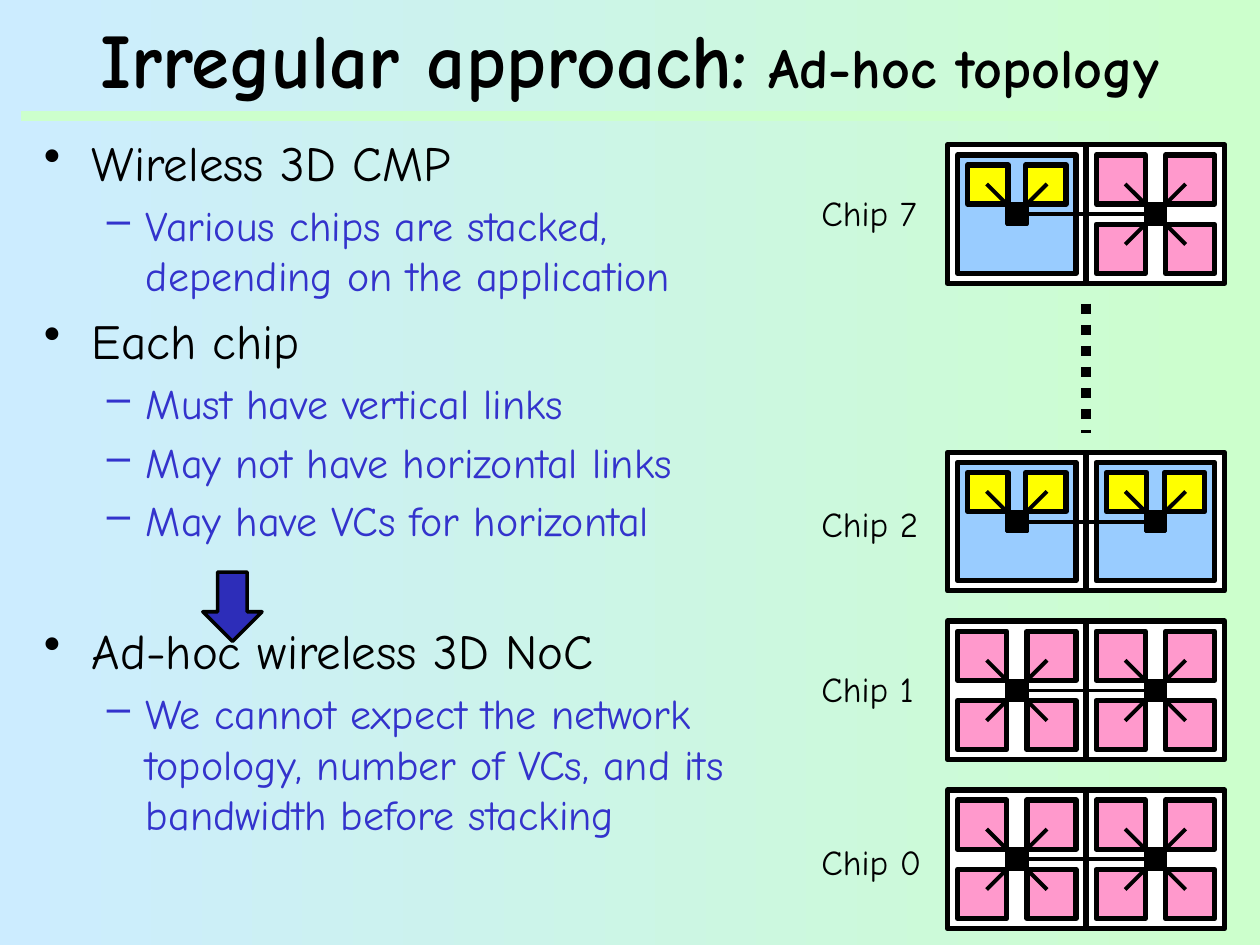
"""Builds the slide on an ad-hoc topology for wireless 3D chips."""
from lxml import etree
from pptx import Presentation
from pptx import util as u
from pptx.dml.color import RGBColor
from pptx.enum import dml, shapes, text
from pptx.oxml.ns import qn

COLUMNS, ROWS = 100, 75
CELL = u.Inches(0.1)
TILE = 11
FONT = "Comic Neue"
COLORS = {
    "sky": "CCECFF", "mint": "CCFFCC", "ink": "000000", "detail": "3333CC",
    "arrow": "2D2DB9", "tile": "FFFFFF", "cpu": "99CCFF", "cache": "FFFF00",
    "core": "FF99CC",
}
CHIPS = [
    ("Chip 7", 11.5, 14.7, ("cpu", "cores")),
    ("Chip 2", 35.9, 39.4, ("cpu", "cpu")),
    ("Chip 1", 49.3, 52.5, ("cores", "cores")),
    ("Chip 0", 62.7, 66.2, ("cores", "cores")),
]
TOPICS = [
    ("Wireless 3D CMP", 5.6,
     ["Various chips are stacked, depending on the application"]),
    ("Each chip", 5.6,
     ["Must have vertical links", "May not have horizontal links",
      "May have VCs for horizontal"]),
    ("Ad-hoc wireless 3D NoC", 43,
     ["We cannot expect the network topology, number of VCs, and its "
      "bandwidth before stacking"]),
]


def color(name):
    """Return the named colour."""
    return RGBColor.from_string(COLORS[name])


def cells(*lengths):
    """Convert grid cells to slide lengths."""
    return [round(length * CELL) for length in lengths]


def add_run(paragraph, words, size, ink="ink", bold=False):
    """Append formatted text to a paragraph."""
    run = paragraph.add_run()
    run.text = words
    run.font.name = FONT
    run.font.size = u.Pt(size)
    run.font.bold = bold
    run.font.color.rgb = color(ink)


def add_frame(slide, box, wrap=True, anchor=text.MSO_ANCHOR.TOP):
    """Add a text box and return its frame."""
    frame = slide.shapes.add_textbox(*cells(*box)).text_frame
    frame.word_wrap = wrap
    frame.vertical_anchor = anchor
    return frame


def add_block(slide, box, fill, width=3, kind=shapes.MSO_SHAPE.RECTANGLE):
    """Add a filled, outlined shape."""
    block = slide.shapes.add_shape(kind, *cells(*box))
    block.shadow.inherit = False
    block.fill.solid()
    block.fill.fore_color.rgb = color(fill)
    block.line.color.rgb = color("ink")
    block.line.width = u.Pt(width)
    return block


def add_line(slide, start, end, ink="ink", width=2.25):
    """Add a straight line without a shadow."""
    line = slide.shapes.add_connector(
        shapes.MSO_CONNECTOR.STRAIGHT, *cells(*start, *end))
    line.line.color.rgb = color(ink)
    line.line.width = u.Pt(width)
    etree.SubElement(line._element.spPr, qn("a:effectLst"))
    return line


def add_title(slide, box):
    """Place the two-size title and the rule below it."""
    add_line(slide, (1.7, 9.2), (99.2, 9.2), ink="mint", width=6)
    frame = add_frame(slide, box, anchor=text.MSO_ANCHOR.MIDDLE)
    paragraph = frame.paragraphs[0]
    paragraph.alignment = text.PP_ALIGN.CENTER
    add_run(paragraph, "Irregular approach:", 44, bold=True)
    add_run(paragraph, " Ad-hoc topology", 32, bold=True)


def add_bullet(paragraph, mark, margin, hang):
    """Give a paragraph a bullet with a hanging indent."""
    properties = paragraph._p.get_or_add_pPr()
    left, first = cells(margin, -hang)
    properties.set("marL", str(left))
    properties.set("indent", str(first))
    etree.SubElement(properties, qn("a:buChar")).set("char", mark)


def add_topics(slide, box):
    """Place the topics and their details as a bulleted list."""
    frame = add_frame(slide, box)
    paragraph = frame.paragraphs[0]
    for topic, gap, details in TOPICS:
        if paragraph.runs:
            paragraph = frame.add_paragraph()
        paragraph.space_before = u.Pt(gap)
        add_bullet(paragraph, "•", 3.8, 3.8)
        add_run(paragraph, topic, 28)
        for detail in details:
            paragraph = frame.add_paragraph()
            paragraph.level = 1
            paragraph.space_before = u.Pt(4.8)
            add_bullet(paragraph, "–", 8.1, 3.1)
            add_run(paragraph, detail, 24, ink="detail")


def add_tile(slide, left, top, kind):
    """Place one tile with its cores or caches and return its router."""
    middle = TILE / 2
    add_block(slide, (left, top, TILE, TILE), "tile")
    if kind == "cpu":
        add_block(slide, (left + 0.8, top + 0.8, 9.4, 9.4), "cpu")
        for x in (1.6, 6.2):
            add_block(slide, (left + x, top + 1.6, 3.2, 3.1), "cache")
    else:
        for x in (0.8, 6.3):
            for y in (0.8, 6.3):
                add_block(slide, (left + x, top + y, 3.9, 3.9), "core")
    router = add_block(slide, (left + 4.7, top + 4.7, 1.6, 1.6), "ink", width=2)
    reach = 0 if kind == "cpu" else 2.4
    for side in (-1, 1):
        add_line(slide,
                 (left + middle + side * 2.4, top + middle - 2.4),
                 (left + middle - side * reach, top + middle + reach))
    return router


def add_chip(slide, left, top, kinds):
    """Place a chip of two tiles with linked routers."""
    routers = [add_tile(slide, left + column * TILE, top, kind)
               for column, kind in enumerate(kinds)]
    center = (left + TILE / 2, top + TILE / 2)
    link = add_line(slide, center, (center[0] + TILE, center[1]))
    link.end_connect(routers[1], 3)


def add_stack(slide, left, label_left):
    """Place the labelled chips and the dots for those left out."""
    for label, top, label_top, kinds in CHIPS:
        frame = add_frame(slide, (label_left, label_top, TILE, 4.4), wrap=False)
        add_run(frame.paragraphs[0], label, 20)
        add_chip(slide, left, top, kinds)
    dots = add_line(slide, (left + TILE, 24.1), (left + TILE, 34.4), width=6)
    dots.line.dash_style = dml.MSO_LINE.ROUND_DOT


def add_background(slide):
    """Fill the background from sky to mint, left to right."""
    fill = slide.background.fill
    fill.gradient()
    fill.gradient_angle = 0
    for stop, name, position in zip(fill.gradient_stops, ("sky", "mint"), (0, 1)):
        stop.color.rgb = color(name)
        stop.position = position


def main():
    """Build and save the presentation."""
    presentation = Presentation()
    presentation.slide_width, presentation.slide_height = cells(COLUMNS, ROWS)
    slide = presentation.slides.add_slide(presentation.slide_layouts[6])
    add_background(slide)
    add_title(slide, (0, 0.8, COLUMNS, 7.5))
    add_topics(slide, (2.5, 10, 60.1, 60.6))
    add_stack(slide, 75.2, 64.2)
    add_block(slide, (16.1, 45.4, 4.7, 5.5), "arrow", width=2,
              kind=shapes.MSO_SHAPE.DOWN_ARROW)
    presentation.save("out.pptx")


if __name__ == "__main__":
    main()
